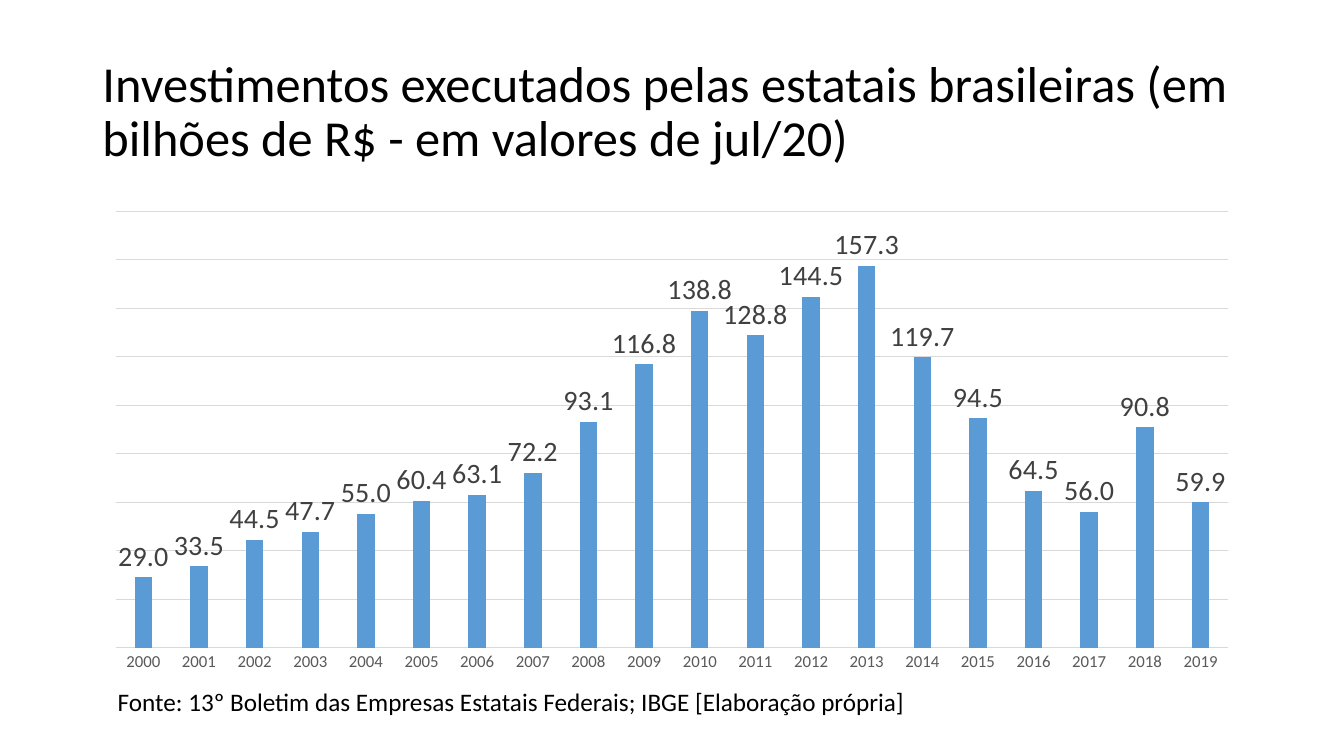
from lxml.etree import SubElement
from pptx import Presentation
from pptx.chart.data import CategoryChartData
from pptx.dml.color import RGBColor
from pptx.enum.chart import XL_CHART_TYPE as ChartType
from pptx.enum.chart import XL_LABEL_POSITION as LabelPos
from pptx.enum.chart import XL_TICK_MARK as TickMark
from pptx.enum.text import MSO_ANCHOR, MSO_AUTO_SIZE
from pptx.util import Pt

TITLE = ("Investimentos executados pelas estatais brasileiras "
         "(em bilhões de R$ - em valores de jul/20)")
SOURCE = "Fonte: 13º Boletim das Empresas Estatais Federais; IBGE [Elaboração própria]"
FIRST_YEAR = 2000
INVESTMENTS = [29.0, 33.5, 44.5, 47.7, 55.0, 60.4, 63.1, 72.2, 93.1, 116.8,
               138.8, 128.8, 144.5, 157.3, 119.7, 94.5, 64.5, 56.0, 90.8, 59.9]

FONT = "Calibri"
BLACK, LABEL, AXIS, GRID, BAR = "000000", "404040", "595959", "D9D9D9", "5B9BD5"
LEFT, WIDTH = 66, 828
TITLE_TOP, TITLE_HEIGHT = 28.75, 104.4
CHART_TOP, CHART_HEIGHT = 144, 342.6


def color(hex_string):
    return RGBColor.from_string(hex_string)


def set_font(font, size, hex_string):
    font.name, font.size = FONT, Pt(size)
    font.color.rgb = color(hex_string)


def set_line(line):
    line.color.rgb = color(GRID)
    line.width = Pt(0.75)


def add_title(slide):
    title = slide.shapes.title
    title.left, title.top = Pt(LEFT), Pt(TITLE_TOP)
    title.width, title.height = Pt(WIDTH), Pt(TITLE_HEIGHT)
    tf = title.text_frame
    tf.text = TITLE
    tf.word_wrap = True
    tf.auto_size = MSO_AUTO_SIZE.NONE
    tf.vertical_anchor = MSO_ANCHOR.MIDDLE
    p = tf.paragraphs[0]
    # The default template centres titles.
    p.alignment = 1
    p.line_spacing = 0.9
    set_font(p.font, 36, BLACK)


def add_investment_chart(slide):
    data = CategoryChartData(number_format="0.0")
    data.categories = [str(FIRST_YEAR + i) for i in range(len(INVESTMENTS))]
    data.add_series("Series 1", INVESTMENTS)
    chart = slide.shapes.add_chart(
        ChartType.COLUMN_CLUSTERED, Pt(LEFT), Pt(CHART_TOP),
        Pt(WIDTH), Pt(CHART_HEIGHT), data).chart
    chart.has_legend = chart.has_title = False
    set_font(chart.font, 10, BLACK)

    years = chart.category_axis
    years.major_tick_mark = years.minor_tick_mark = TickMark.NONE
    set_font(years.tick_labels.font, 12, AXIS)
    set_line(years.format.line)

    amounts = chart.value_axis
    amounts.minimum_scale, amounts.maximum_scale, amounts.major_unit = 0, 180, 20
    amounts.has_major_gridlines = True
    set_line(amounts.major_gridlines.format.line)
    amounts.visible = False

    plot = chart.plots[0]
    plot.gap_width, plot.overlap = 219, -27
    plot.vary_by_categories = False
    fill = plot.series[0].format.fill
    fill.solid()
    fill.fore_color.rgb = color(BAR)
    plot.has_data_labels = True
    labels = plot.data_labels
    labels.show_value = True
    labels.position = LabelPos.OUTSIDE_END
    labels.number_format, labels.number_format_is_linked = "0.0", False
    set_font(labels.font, 20, LABEL)


def add_source(slide):
    s = slide.shapes.add_textbox(Pt(77), Pt(486.6), Pt(576.5), Pt(29))
    tf = s.text_frame
    tf.text = SOURCE
    tf.word_wrap = False
    tf.auto_size = MSO_AUTO_SIZE.SHAPE_TO_FIT_TEXT
    set_font(tf.paragraphs[0].font, 18, BLACK)


def main():
    prs = Presentation()
    prs.slide_width, prs.slide_height = Pt(960), Pt(540)
    slide = prs.slides.add_slide(prs.slide_layouts[5])
    add_title(slide)
    add_investment_chart(slide)
    add_source(slide)
    prs.save("out.pptx")


if __name__ == "__main__":
    main()
